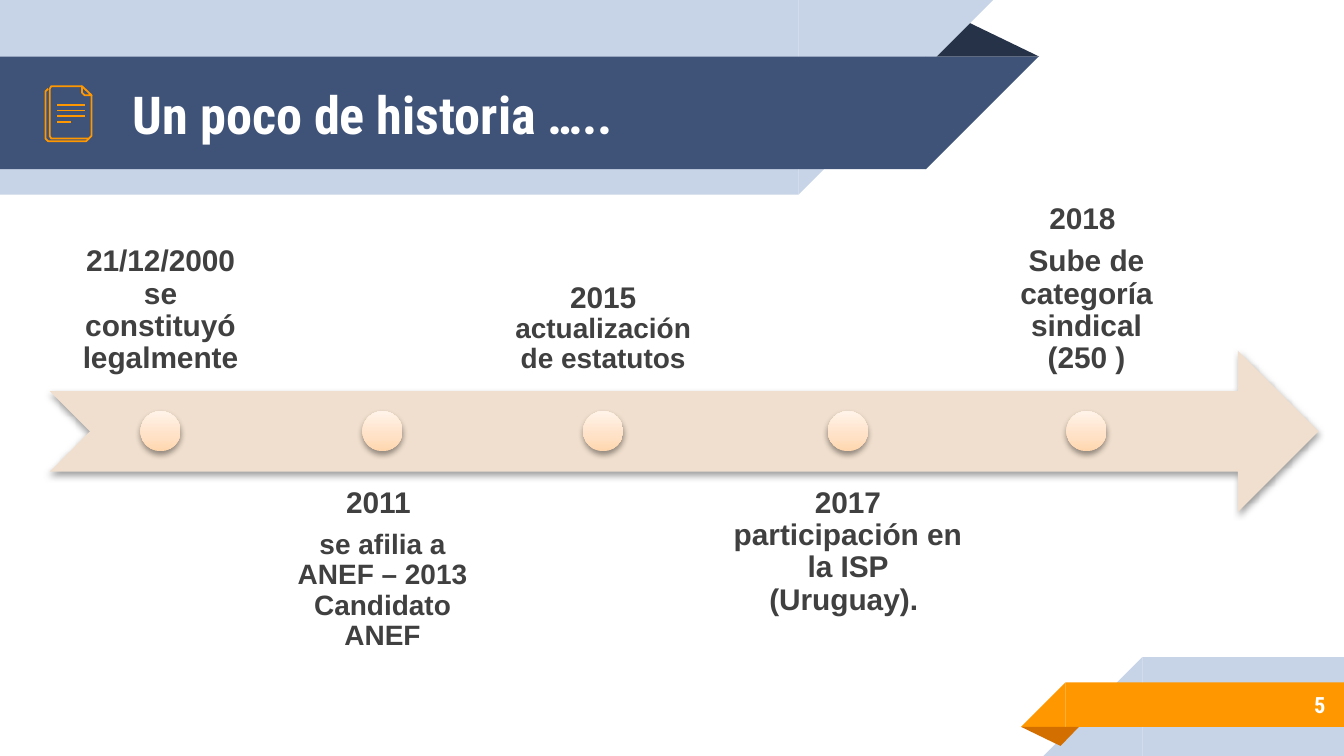
from copy import deepcopy
from dataclasses import dataclass

from lxml.etree import SubElement
from pptx import Presentation
from pptx.dml.color import RGBColor
from pptx.enum.shapes import MSO_CONNECTOR, MSO_SHAPE
from pptx.enum.text import MSO_ANCHOR, MSO_AUTO_SIZE, PP_ALIGN
from pptx.oxml.ns import qn
from pptx.shapes.autoshape import Shape
from pptx.slide import Slide
from pptx.text.text import TextFrame
from pptx.util import Cm, Pt


@dataclass(frozen=True)
class Theme:
    pale: str = "C7D3E6"
    navy: str = "3F5378"
    navy_fold: str = "263248"
    orange: str = "FF9800"
    orange_fold: str = "D26F00"
    arrow: str = "F0DFCE"
    dot_stops: tuple = ((0, "FFD6AD"), (0.35, "FFE1C5"), (1, "FFF3E9"))
    ink: str = "404040"
    white: str = "FFFFFF"
    heading_font: str = "Roboto Condensed"
    label_font: str = "Arial"
    title_size: float = 28
    number_size: float = 12
    label_size: float = 16
    detail_size: float = 15
    icon_line: float = 0.96


@dataclass(frozen=True)
class Ribbon:
    """A bar with one slanted end; x is where bar and slant meet."""
    x: float
    top: float
    bar: float
    height: float
    color: str
    at_left: bool


@dataclass(frozen=True)
class Milestone:
    """Paragraphs hold (text, size) runs; width is that of the label column."""
    width: float
    above: bool
    paragraphs: tuple


THEME = Theme()
SLIDE_W, SLIDE_H = 25.4, 14.29
BIG, SMALL = THEME.label_size, THEME.detail_size

HEADER = (
    Ribbon(15.09, 0, 15.09, 3.68, THEME.pale, True),
    Ribbon(17.5, 1.07, 17.5, 2.13, THEME.navy, True),
)
FOOTER = (
    Ribbon(21.59, 12.42, SLIDE_W - 21.59, SLIDE_H - 12.42, THEME.pale, False),
    Ribbon(20.14, 12.9, SLIDE_W - 20.14, 0.84, THEME.orange, False),
)
MILESTONES = (
    Milestone(4.19, True, ((("21/12/2000 se constituyó legalmente", BIG),),)),
    Milestone(4.02, False, ((("2011 ", BIG),),
                            (("se afilia a ANEF – 2013 Candidato ANEF", SMALL),))),
    Milestone(4.14, True, ((("2015 ", BIG), ("actualización de estatutos", SMALL)),)),
    Milestone(4.93, False, ((("2017 participación en la ISP (Uruguay). ", BIG),),)),
    Milestone(3.91, True, ((("2018 ", BIG),),
                           (("Sube de categoría sindical (250 )", BIG),))),
)
COLUMN_LEFT, COLUMN_GAP = 0.94, 0.09
LABEL_H, ABOVE_TOP, BELOW_TOP = 3.05, 4.34, 8.92
DOT, AXIS_Y = 0.76, 8.15

BACK_SHEET = ((1.68, 2.62), (1.63, 2.67), (0.91, 2.67), (0.86, 2.62),
              (0.86, 1.73), (0.91, 1.68))
FRONT_SHEET = ((1.73, 1.8), (1.73, 2.57), (1.68, 2.62), (0.97, 2.62),
               (0.94, 2.57), (0.94, 1.68), (0.97, 1.63), (1.55, 1.63))
PAGE_CORNER = ((1.55, 1.63), (1.73, 1.8), (1.6, 1.8), (1.55, 1.75))
WRITING_ENDS = (1.6, 1.6, 1.6, 1.35)


def rgb(color: str) -> RGBColor:
    return RGBColor.from_string(color)


def add_plain(slide: Slide, kind: MSO_SHAPE, left: float, top: float,
              width: float, height: float, color: str) -> Shape:
    shape = slide.shapes.add_shape(kind, Cm(left), Cm(top), Cm(width), Cm(height))
    shape.fill.solid()
    shape.fill.fore_color.rgb = rgb(color)
    shape.line.fill.background()
    shape.shadow.inherit = False
    return shape


def add_ribbon(slide: Slide, ribbon: Ribbon) -> None:
    left_of_x, right_of_x = ribbon.x - ribbon.height, ribbon.x
    bar_left = 0 if ribbon.at_left else right_of_x
    slant_left = right_of_x if ribbon.at_left else left_of_x
    add_plain(slide, MSO_SHAPE.RECTANGLE, bar_left, ribbon.top,
              ribbon.bar, ribbon.height, ribbon.color)
    slant = add_plain(slide, MSO_SHAPE.RIGHT_TRIANGLE, slant_left, ribbon.top,
                      ribbon.height, ribbon.height, ribbon.color)
    slant._element.spPr.xfrm.set("flipH", "1")
    slant.rotation = 180 if ribbon.at_left else 0


def add_fold(slide: Slide, left: float, top: float, width: float, height: float,
             color: str, rotation: float = 0) -> None:
    fold = add_plain(slide, MSO_SHAPE.ISOSCELES_TRIANGLE, left, top, width, height, color)
    fold.adjustments[0] = 0.32
    fold.rotation = rotation


def add_icon_outline(slide: Slide, points: tuple, closed: bool = False) -> None:
    (start_x, start_y), *rest = [(Cm(x), Cm(y)) for x, y in points]
    builder = slide.shapes.build_freeform(start_x, start_y)
    builder.add_line_segments(rest, close=closed)
    outline = builder.convert_to_shape()
    outline.fill.background()
    outline.line.color.rgb = rgb(THEME.orange)
    outline.line.width = Pt(THEME.icon_line)
    outline.shadow.inherit = False


def add_page_icon(slide: Slide) -> None:
    add_icon_outline(slide, BACK_SHEET)
    add_icon_outline(slide, FRONT_SHEET)
    for row, end in enumerate(WRITING_ENDS):
        y = Cm(1.98 + 0.11 * row)
        writing = slide.shapes.add_connector(MSO_CONNECTOR.STRAIGHT, Cm(end), y, Cm(1.07), y)
        writing.line.color.rgb = rgb(THEME.orange)
        writing.line.width = Pt(THEME.icon_line)
        SubElement(writing._element.spPr, qn("a:effectLst"))
    add_icon_outline(slide, PAGE_CORNER, closed=True)


def set_frame(frame: TextFrame, inset: float, anchor: MSO_ANCHOR) -> None:
    frame.word_wrap = True
    frame.auto_size = MSO_AUTO_SIZE.NONE
    frame.vertical_anchor = anchor
    frame.margin_left = frame.margin_right = Cm(inset)
    frame.margin_top = frame.margin_bottom = Cm(inset)


def write_heading(frame: TextFrame, text: str, size: float, align: PP_ALIGN) -> None:
    set_frame(frame, 0.25, MSO_ANCHOR.MIDDLE)
    frame.text = text
    paragraph = frame.paragraphs[0]
    paragraph.alignment = align
    font = paragraph.font
    font.name, font.size, font.bold = THEME.heading_font, Pt(size), True
    font.color.rgb = rgb(THEME.white)


def drop_shadow(shape: Shape) -> None:
    effects = shape._element.spPr.find(qn("a:effectLst"))
    shadow = SubElement(effects, qn("a:outerShdw"), blurRad="40000", dist="20000",
                        dir="5400000", rotWithShape="0")
    black = SubElement(shadow, qn("a:srgbClr"), val="000000")
    SubElement(black, qn("a:alpha"), val="38000")


def add_dot(slide: Slide, center: float) -> None:
    dot = add_plain(slide, MSO_SHAPE.OVAL, center - DOT / 2, AXIS_Y - DOT / 2,
                    DOT, DOT, THEME.arrow)
    dot.fill.gradient()
    dot.fill.gradient_angle = 90
    stop_list = dot._element.spPr.find(f".//{qn('a:gsLst')}")
    stop_list.append(deepcopy(stop_list[0]))
    for stop, (position, color) in zip(dot.fill.gradient_stops, THEME.dot_stops):
        stop.position = position
        stop.color.rgb = rgb(color)
    drop_shadow(dot)


def add_label(slide: Slide, left: float, milestone: Milestone) -> None:
    top = ABOVE_TOP if milestone.above else BELOW_TOP
    frame = slide.shapes.add_textbox(Cm(left), Cm(top), Cm(milestone.width),
                                     Cm(LABEL_H)).text_frame
    set_frame(frame, 0.3, MSO_ANCHOR.BOTTOM if milestone.above else MSO_ANCHOR.TOP)
    for index, runs in enumerate(milestone.paragraphs):
        paragraph = frame.add_paragraph() if index else frame.paragraphs[0]
        paragraph.alignment = PP_ALIGN.CENTER
        paragraph.line_spacing = 0.9
        paragraph.space_after = Pt(5.6)
        paragraph.font.name, paragraph.font.bold = THEME.label_font, True
        paragraph.font.color.rgb = rgb(THEME.ink)
        for text, size in runs:
            run = paragraph.add_run()
            run.text = text
            run.font.size = Pt(size)


def add_timeline(slide: Slide) -> None:
    drop_shadow(add_plain(slide, MSO_SHAPE.NOTCHED_RIGHT_ARROW, COLUMN_LEFT, 6.63,
                          23.98, 3.05, THEME.arrow))
    left = COLUMN_LEFT
    for milestone in MILESTONES:
        add_label(slide, left, milestone)
        add_dot(slide, left + milestone.width / 2)
        left += milestone.width + COLUMN_GAP


def main() -> None:
    deck = Presentation()
    deck.slide_width, deck.slide_height = Cm(SLIDE_W), Cm(SLIDE_H)
    slide = deck.slides.add_slide(deck.slide_layouts[5])

    add_fold(slide, 17.48, 0.36, 2.16, 0.71, THEME.navy_fold)
    add_fold(slide, 19.3, 13.74, 1.09, 0.36, THEME.orange_fold, rotation=180)
    for ribbon in HEADER:
        add_ribbon(slide, ribbon)
    footer_fold = slide.shapes[2]._element
    for ribbon in FOOTER:
        add_ribbon(slide, ribbon)
    slide.shapes[-1]._element.addnext(footer_fold)

    title = slide.shapes.title
    title.left, title.top, title.width, title.height = Cm(2.26), Cm(1.09), Cm(14.6), Cm(2.13)
    write_heading(title.text_frame, "Un poco de historia …..", THEME.title_size, PP_ALIGN.LEFT)
    slide.shapes[-1]._element.addnext(title._element)
    number = slide.shapes.add_textbox(Cm(21.16), Cm(12.88), Cm(4.14), Cm(0.89))
    write_heading(number.text_frame, "5", THEME.number_size, PP_ALIGN.RIGHT)

    add_page_icon(slide)
    add_timeline(slide)
    deck.save("out.pptx")


if __name__ == "__main__":
    main()
